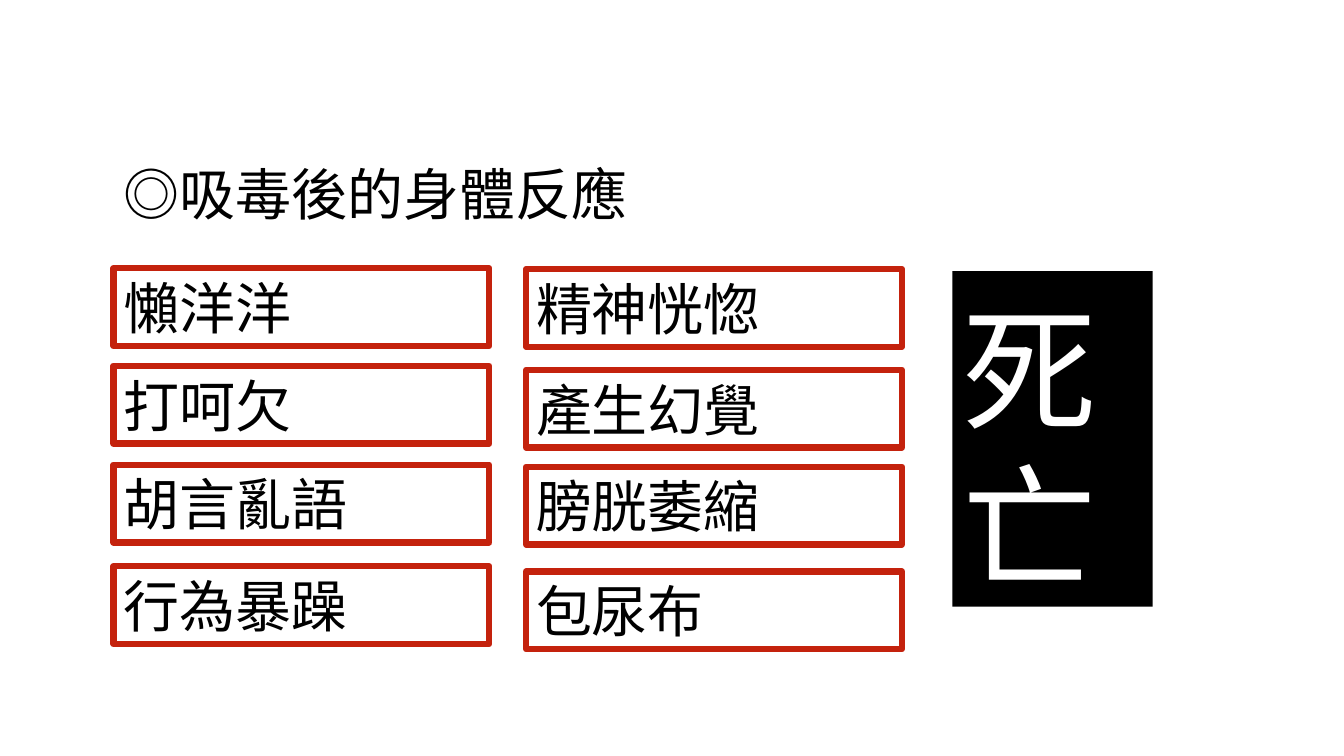
from dataclasses import dataclass

from lxml import etree
from pptx import Presentation
from pptx.dml.color import RGBColor
from pptx.enum import shapes, text
from pptx.oxml import ns
from pptx.util import Cm, Pt


@dataclass(frozen=True)
class Theme:
    font: str = "Noto Sans CJK SC"
    ink: RGBColor = RGBColor(0, 0, 0)
    paper: RGBColor = RGBColor(255, 255, 255)
    border: RGBColor = RGBColor(0xC4, 0x22, 0x0D)
    border_width: Pt = Pt(4.5)
    body_size: Pt = Pt(40)
    warning_size: Pt = Pt(96)
    warning_pitch: Pt = Pt(112)


THEME = Theme()
TITLE = "◎吸毒後的身體反應"
# Each column: left edge, then the top edge and wording of its boxes, in cm.
SYMPTOM_COLUMNS = [
    (2.86, [(6.76, "懶洋洋"), (9.22, "打呵欠"), (11.71, "胡言亂語"), (14.27, "行為暴躁")]),
    (13.26, [(6.78, "精神恍惚"), (9.32, "產生幻覺"), (11.76, "膀胱萎縮"), (14.4, "包尿布")]),
]
SYMPTOM_WIDTH, SYMPTOM_HEIGHT = 9.47, 1.96


def write(box, words, size, color, anchor=text.MSO_ANCHOR.MIDDLE):
    """Put one left-aligned run in the box and return its paragraph."""
    frame = box.text_frame
    frame.word_wrap = True
    frame.auto_size = text.MSO_AUTO_SIZE.NONE
    frame.vertical_anchor = anchor
    frame.margin_left = frame.margin_right = Cm(0.25)
    frame.margin_top = frame.margin_bottom = Cm(0.13)
    para = frame.paragraphs[0]
    para.alignment = text.PP_ALIGN.LEFT
    span = para.add_run()
    span.text = words
    span.font.size = size
    span.font.color.rgb = color
    span.font.name = THEME.font
    east_asian = etree.SubElement(span.font._element, ns.qn("a:ea"))
    east_asian.set("typeface", THEME.font)
    return para


def add_rectangle(page, left, top, width, height):
    box = page.shapes.add_shape(
        shapes.MSO_SHAPE.RECTANGLE, Cm(left), Cm(top), Cm(width), Cm(height)
    )
    box.shadow.inherit = False
    return box


def place_title(page, left, top, width, height):
    title = page.shapes.title
    title.left, title.top = Cm(left), Cm(top)
    title.width, title.height = Cm(width), Cm(height)
    write(title, TITLE, THEME.body_size, THEME.ink)


def add_symptom(page, left, top, width, height, words):
    box = add_rectangle(page, left, top, width, height)
    box.fill.background()
    box.line.color.rgb = THEME.border
    box.line.width = THEME.border_width
    write(box, words, THEME.body_size, THEME.ink)


def add_warning(page, left, top, width, height):
    box = add_rectangle(page, left, top, width, height)
    box.fill.solid()
    box.fill.fore_color.rgb = THEME.ink
    box.line.fill.background()
    para = write(box, "死亡", THEME.warning_size, THEME.paper, text.MSO_ANCHOR.TOP)
    para.line_spacing = THEME.warning_pitch
    box.text_frame.margin_top = Cm(0.5)


def main():
    deck = Presentation()
    deck.slide_width, deck.slide_height = Cm(33.87), Cm(19.05)
    page = deck.slides.add_slide(deck.slide_layouts.get_by_name("Title Only"))
    place_title(page, 2.87, 3.89, 20.6, 1.96)
    for left, symptoms in SYMPTOM_COLUMNS:
        for top, words in symptoms:
            add_symptom(page, left, top, SYMPTOM_WIDTH, SYMPTOM_HEIGHT, words)
    add_warning(page, 24, 6.83, 5.05, 8.46)
    deck.save("out.pptx")


if __name__ == "__main__":
    main()
